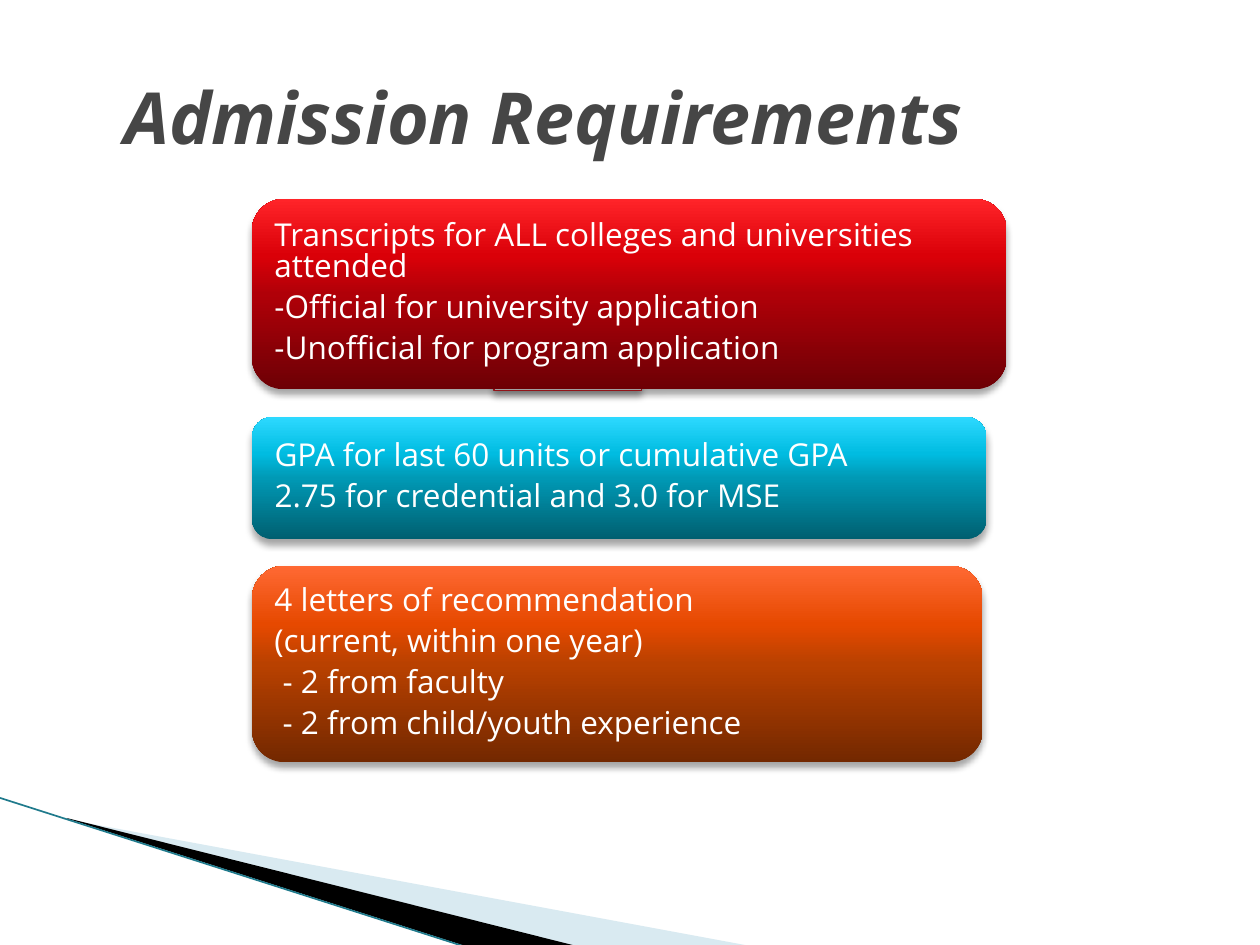
from lxml import etree
from pptx import Presentation
from pptx.dml.color import RGBColor
from pptx.enum import shapes, text
from pptx.oxml import ns
from pptx.util import Pt

FONT = "Open Sans"
CARD_LEFT = 144
CARD_INSET = 13
ROUND_INSET = 0.05
STOPS = (0, 50, 70, 100)

CARDS = [
    (113.75, 431.25, 108.75, ("6D0005", "B00008", "DA0008", "FF2429"), [
        ("Transcripts for ALL colleges and universities attended", 0),
        ("-Official for university application", 0),
        ("-Unofficial for program application", 0),
    ]),
    (238.3, 419.75, 69.85, ("005F70", "0099B5", "00BCE1", "2DD9FF"), [
        ("GPA for last 60 units or cumulative GPA", 0),
        ("2.75 for credential and 3.0 for MSE", 0),
    ]),
    (323.3, 417.6, 112.3, ("732800", "B94100", "E64900", "FF6933"), [
        ("4 letters of recommendation", 0),
        ("(current, within one year)", 0),
        ("- 2 from faculty", 4.7),
        ("- 2 from child/youth experience", 4.7),
    ]),
]


def color(value):
    return RGBColor.from_string(value)


def add_element(parent, tag, **attributes):
    element = etree.SubElement(parent, ns.qn(tag))
    for name, value in attributes.items():
        element.set(name, str(value))
    return element


def set_alpha(parent, percent):
    for element in parent.iter(ns.qn("a:srgbClr")):
        add_element(element, "a:alpha", val=percent * 1000)


def add_shadow(shape):
    shape.shadow.inherit = False
    effects = shape._element.spPr.find(ns.qn("a:effectLst"))
    shadow = add_element(effects, "a:outerShdw", blurRad=Pt(4), dist=Pt(3),
                         dir=5400000, rotWithShape=0)
    add_element(shadow, "a:srgbClr", val="000000")
    set_alpha(shadow, 35)


def set_gradient(shape, colors):
    shape.fill.gradient()
    shape.fill.gradient_angle = 90
    stops = next(shape._element.spPr.iter(ns.qn("a:gsLst")))
    for stop in list(stops):
        stops.remove(stop)
    for position, value in zip(STOPS, colors):
        stop = add_element(stops, "a:gs", pos=position * 1000)
        add_element(stop, "a:srgbClr", val=value)


def add_wedge(slide, points, fill, alpha=100):
    points = [(Pt(x), Pt(y)) for x, y in points]
    builder = slide.shapes.build_freeform(*points[0], scale=1.0)
    builder.add_line_segments(points[1:], close=True)
    shape = builder.convert_to_shape()
    shape.shadow.inherit = False
    shape.fill.solid()
    shape.fill.fore_color.rgb = color(fill)
    shape.line.fill.background()
    if alpha < 100:
        set_alpha(shape._element.spPr, alpha)


def add_edge_line(slide):
    line = slide.shapes.add_connector(
        shapes.MSO_CONNECTOR.STRAIGHT, Pt(-0.7), Pt(455.75), Pt(267.1), Pt(541.4))
    line.line.color.rgb = color("1F7A8C")
    line.line.width = Pt(0.95)
    add_element(line._element.spPr, "a:effectLst")


def set_title(slide):
    title = slide.shapes.title
    title.left, title.top, title.width, title.height = Pt(0), Pt(30), Pt(648), Pt(72)
    frame = title.text_frame
    frame.text = "Admission Requirements"
    frame.margin_left = Pt(71)
    frame.vertical_anchor = text.MSO_ANCHOR.MIDDLE
    paragraph = frame.paragraphs[0]
    paragraph.alignment = text.PP_ALIGN.LEFT
    font = paragraph.font
    font.name, font.size = FONT, Pt(41)
    font.bold = font.italic = True
    font.color.rgb = color("464646")


def add_tab(slide):
    tab = slide.shapes.add_shape(
        shapes.MSO_SHAPE.RECTANGLE, Pt(282.25), Pt(208.8), Pt(84.25), Pt(14.4))
    add_shadow(tab)
    tab.fill.solid()
    tab.fill.fore_color.rgb = color("FFFFFF")
    set_alpha(tab._element.spPr.find(ns.qn("a:solidFill")), 90)
    tab.line.color.rgb = color("DA1F28")
    tab.line.width = Pt(0.75)


def add_card(slide, top, width, height, colors, lines):
    card = slide.shapes.add_shape(
        shapes.MSO_SHAPE.ROUNDED_RECTANGLE,
        Pt(CARD_LEFT), Pt(top), Pt(width), Pt(height))
    add_shadow(card)
    set_gradient(card, colors)
    card.line.fill.background()
    frame = card.text_frame
    frame.word_wrap = True
    frame.vertical_anchor = text.MSO_ANCHOR.MIDDLE
    frame.margin_left = frame.margin_right = Pt(CARD_INSET - ROUND_INSET * height)
    frame.margin_top = frame.margin_bottom = 0
    for index, (words, indent) in enumerate(lines):
        paragraph = frame.add_paragraph() if index else frame.paragraphs[0]
        paragraph.text = words
        paragraph.alignment = text.PP_ALIGN.LEFT
        paragraph.line_spacing = 0.8
        paragraph.space_after = Pt(6.3)
        if indent:
            paragraph._p.get_or_add_pPr().set("marL", str(Pt(indent)))
        paragraph.font.name = FONT
        paragraph.font.size = Pt(18)
        paragraph.font.color.rgb = color("FFFFFF")


def main():
    presentation = Presentation()
    presentation.slide_width, presentation.slide_height = Pt(720), Pt(540)
    slide = presentation.slides.add_slide(presentation.slide_layouts[5])
    add_wedge(slide, [(39.6, 468.5), (428.4, 540.5), (328.3, 540.5), (39.6, 468)],
              "A0CBDC", 40)
    add_wedge(slide, [(38.2, 467.5), (329, 540.5), (267.8, 541.2), (38.9, 468)],
              "000000")
    add_edge_line(slide)
    set_title(slide)
    add_tab(slide)
    for card in CARDS:
        add_card(slide, *card)
    presentation.save("out.pptx")


if __name__ == "__main__":
    main()
